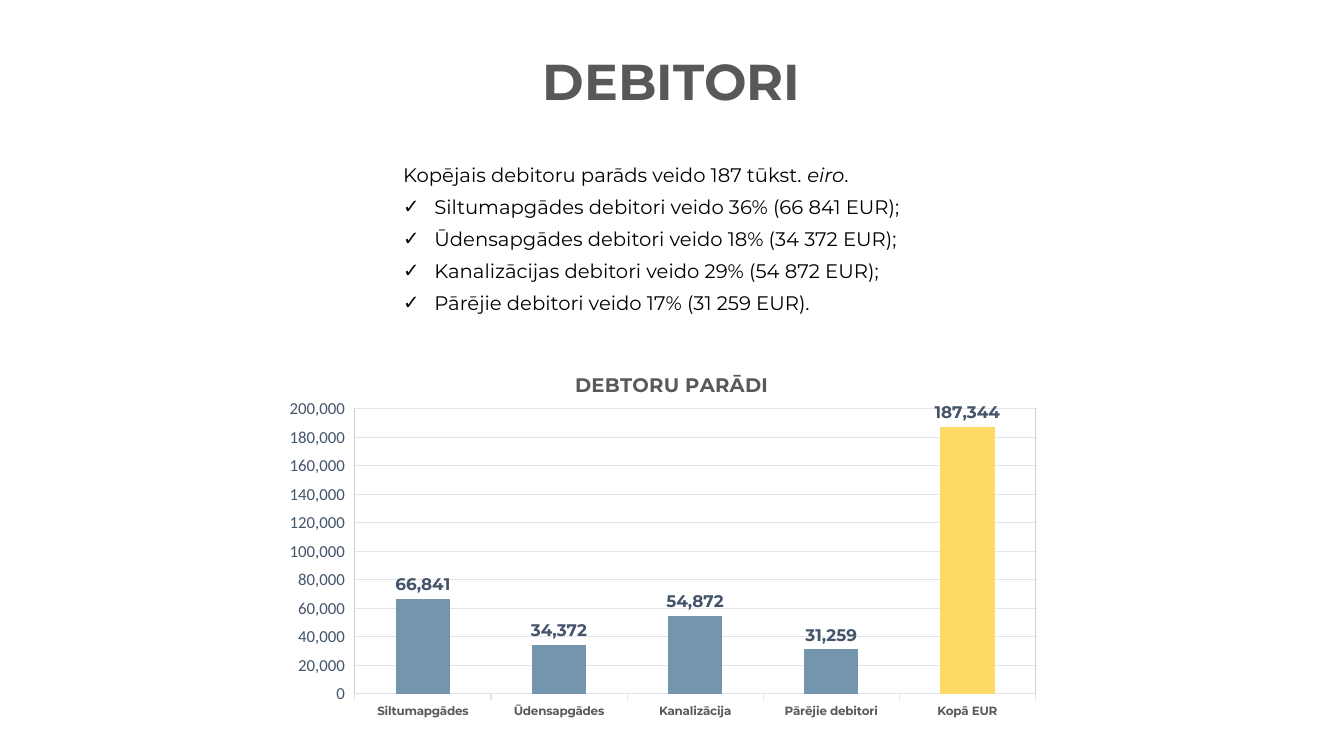
"""Build the debtors slide: heading, check list and column chart."""
from lxml import etree
from pptx import Presentation
from pptx import util as u
from pptx.chart import data as cd
from pptx.dml import color
from pptx.enum import chart as ec
from pptx.enum import text
from pptx.oxml import ns

COLORS = {
    "black": "000000", "heading": "58585B", "label": "595959", "value": "44546A",
    "grid": "E0E5EB", "border": "D0D0D0", "bar": "7395AD", "total": "FFD966",
}
HEAD_FONT = "Montserrat"
DEBTORS = [
    ("Siltumapgādes", 66841), ("Ūdensapgādes", 34372), ("Kanalizācija", 54872),
    ("Pārējie debitori", 31259), ("Kopā EUR", 187344),
]
SHARES = [
    "Siltumapgādes debitori veido 36% (66 841 EUR);",
    "Ūdensapgādes debitori veido 18% (34 372 EUR);",
    "Kanalizācijas debitori veido 29% (54 872 EUR);",
    "Pārējie debitori veido 17% (31 259 EUR).",
]


def rgb(name):
    return color.RGBColor.from_string(COLORS[name])


def style_font(font, size, name, bold=False, face=HEAD_FONT):
    font.size, font.name, font.bold = u.Pt(size), face, bold
    font.color.rgb = rgb(name)


def add_run(p, words, size, name, bold=False, italic=False):
    r = p.add_run()
    r.text = words
    style_font(r.font, size, name, bold)
    r.font.italic = italic


def add_text_frame(s, left, top, width, height, anchor):
    box = s.shapes.add_textbox(*map(u.Inches, (left, top, width, height)))
    tf = box.text_frame
    tf.word_wrap, tf.vertical_anchor = True, anchor
    return tf


def add_heading(s):
    tf = add_text_frame(s, 0.26, 0.11, 12.8, 1.45, text.MSO_ANCHOR.MIDDLE)
    p = tf.paragraphs[0]
    p.alignment, p.line_spacing = text.PP_ALIGN.CENTER, 0.9
    add_run(p, "DEBITORI", 36, "heading", bold=True)


def add_check(p):
    pPr = p._p.get_or_add_pPr()
    pPr.set("marL", str(u.Inches(0.31)))
    pPr.set("indent", str(-u.Inches(0.31)))
    etree.SubElement(pPr, ns.qn("a:buFont"), typeface=HEAD_FONT)
    etree.SubElement(pPr, ns.qn("a:buChar"), char="✓")


def add_shares(s):
    tf = add_text_frame(s, 3.9, 1.57, 7.32, 1.62, text.MSO_ANCHOR.TOP)
    p = tf.paragraphs[0]
    add_run(p, "Kopējais debitoru parāds veido 187 tūkst. ", 14, "black")
    add_run(p, "eiro", 14, "black", italic=True)
    add_run(p, ".", 14, "black")
    for share in SHARES:
        p = tf.add_paragraph()
        add_run(p, share, 14, "black")
        add_check(p)
    for p in tf.paragraphs:
        p.alignment, p.space_before = text.PP_ALIGN.JUSTIFY, u.Pt(6)


def place(parent, index, **settings):
    """Give a chart part a manual layout as its child number index."""
    for old in parent.findall(ns.qn("c:layout")):
        parent.remove(old)
    layout = etree.Element(ns.qn("c:layout"))
    manual = etree.SubElement(layout, ns.qn("c:manualLayout"))
    for tag, val in settings.items():
        etree.SubElement(manual, ns.qn(f"c:{tag}"), val=str(val))
    parent.insert(index, layout)


def add_plot_border(plot_area):
    spPr = etree.SubElement(plot_area, ns.qn("c:spPr"))
    etree.SubElement(spPr, ns.qn("a:noFill"))
    ln = etree.SubElement(spPr, ns.qn("a:ln"), w=str(u.Pt(0.75)))
    fill = etree.SubElement(ln, ns.qn("a:solidFill"))
    etree.SubElement(fill, ns.qn("a:srgbClr"), val=COLORS["border"])


def style_line(line):
    line.color.rgb, line.width = rgb("grid"), u.Pt(0.75)


def style_axes(chart):
    cat, val = chart.category_axis, chart.value_axis
    style_font(cat.tick_labels.font, 8.5, "label", bold=True)
    style_line(cat.format.line)
    style_font(val.tick_labels.font, 12, "value", face="Calibri")
    val.tick_labels.number_format = "#,##0"
    val.tick_labels.number_format_is_linked = False
    val.minimum_scale, val.maximum_scale, val.major_unit = 0, 200000, 20000
    val.format.line.fill.background()
    style_line(val.major_gridlines.format.line)


def style_bars(plot):
    plot.gap_width, plot.vary_by_categories = 150, False
    series = plot.series[0]
    series.invert_if_negative = False
    total = series.points[len(DEBTORS) - 1]
    for part, name in ((series, "bar"), (total, "total")):
        part.format.fill.solid()
        part.format.fill.fore_color.rgb = rgb(name)
    labels = series.data_labels
    labels.show_value, labels.position = True, ec.XL_LABEL_POSITION.OUTSIDE_END
    labels.number_format, labels.number_format_is_linked = "#,##0", False
    style_font(labels.font, 12, "value", bold=True)


def add_debt_chart(s):
    data = cd.CategoryChartData(number_format="#,##0")
    data.categories = [name for name, _ in DEBTORS]
    data.add_series("Series 1", [debt for _, debt in DEBTORS])
    frame = s.shapes.add_chart(
        ec.XL_CHART_TYPE.COLUMN_CLUSTERED,
        *map(u.Inches, (2.83, 3.51, 7.67, 4.56)), data)
    chart = frame.chart
    style_font(chart.font, 10, "black", face="Calibri")
    chart.has_legend, chart.has_title = False, True
    title = chart.chart_title
    add_run(title.text_frame.paragraphs[0], "DEBTORU PARĀDI", 14, "label", bold=True)
    place(title._element, 1, xMode="edge", yMode="edge", x=0.37, y=0.03)
    style_axes(chart)
    style_bars(chart.plots[0])
    plot_area = chart._chartSpace.chart.plotArea
    place(plot_area, 0, layoutTarget="inner", xMode="edge", yMode="edge",
          x=0.09, y=0.12, w=0.88, h=0.62)
    add_plot_border(plot_area)


def main():
    prs = Presentation()
    prs.slide_width, prs.slide_height = u.Inches(13.33), u.Inches(7.5)
    s = prs.slides.add_slide(prs.slide_layouts[6])
    add_heading(s)
    add_shares(s)
    add_debt_chart(s)
    prs.save("out.pptx")


if __name__ == "__main__":
    main()
